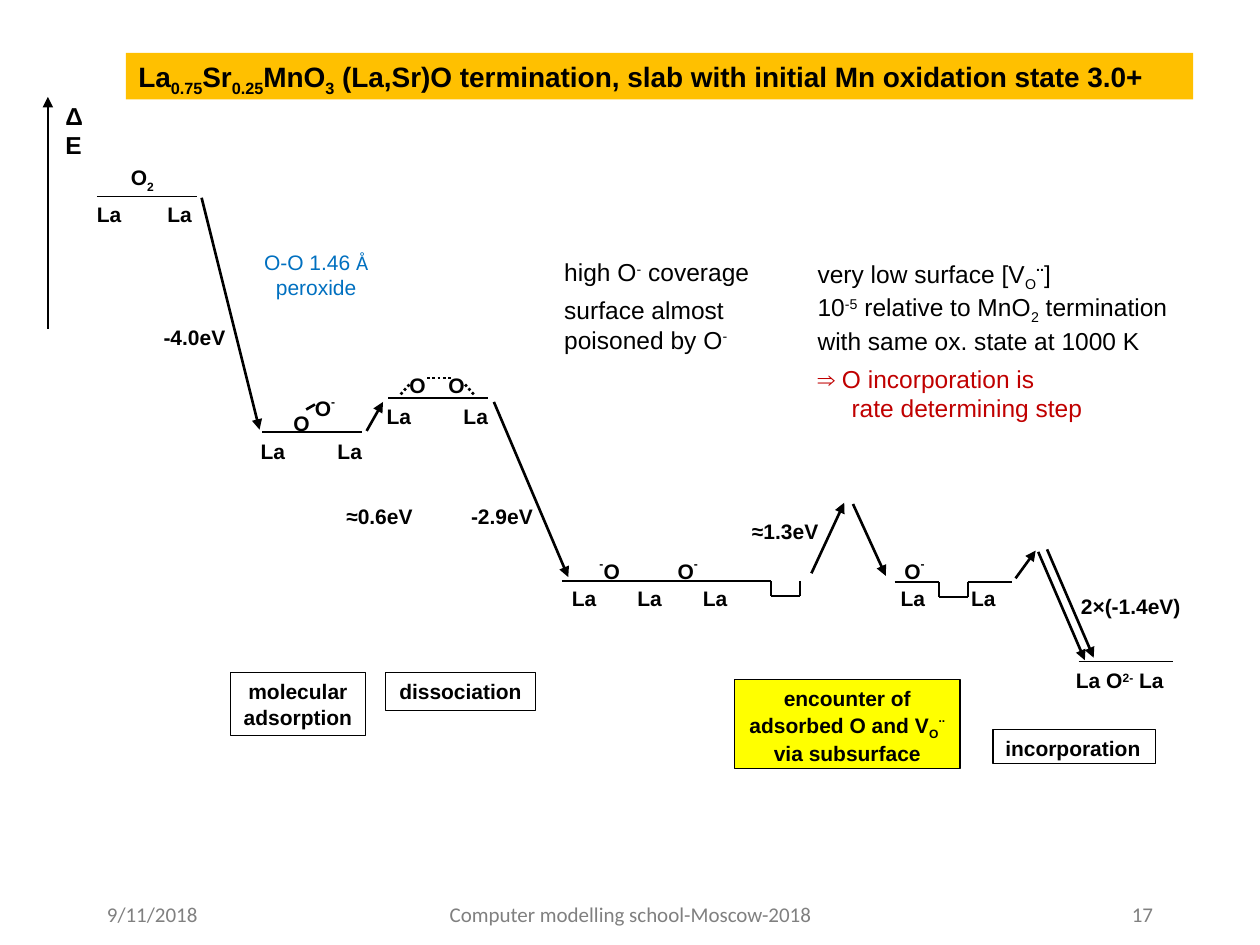
"""Build the energy diagram of oxygen incorporation on a (La,Sr)O-terminated slab."""
from dataclasses import dataclass
from typing import Optional

from lxml.etree import SubElement
from pptx import Presentation
from pptx.dml.color import RGBColor
from pptx.enum.dml import MSO_LINE
from pptx.enum.shapes import MSO_CONNECTOR, MSO_SHAPE
from pptx.enum.text import MSO_ANCHOR, PP_ALIGN
from pptx.oxml.ns import qn
from pptx.util import Inches, Pt

BLACK = RGBColor(0x00, 0x00, 0x00)
GRAY = RGBColor(0x80, 0x80, 0x80)
BLUE = RGBColor(0x00, 0x70, 0xC0)
RED = RGBColor(0xC0, 0x00, 0x00)
YELLOW = RGBColor(0xFF, 0xFF, 0x00)
AMBER = RGBColor(0xFF, 0xC0, 0x00)
LEFT, CENTER, RIGHT = PP_ALIGN.LEFT, PP_ALIGN.CENTER, PP_ALIGN.RIGHT

BASELINES = {"_": -25000, "^": 30000, "~": 50000}
MARK_FORMATS = {"~": {"bold": True}, "@": {"name": "Calibri"}}


@dataclass(frozen=True)
class Label:
    """Text in a box; "|" starts a span, and its first sign may mark a format."""
    left: float
    top: float
    width: float
    height: float
    lines: tuple[str, ...]
    size: int = 12
    bold: bool = True
    color: RGBColor = BLACK
    font: str = "Arial"
    align: PP_ALIGN = LEFT
    wrap: bool = False
    tab: float = 0
    gap_before: Optional[int] = None
    red_from: int = 99
    framed: bool = False
    fill: Optional[RGBColor] = None


@dataclass(frozen=True)
class Line:
    """A straight stroke between two points."""
    x1: float
    y1: float
    x2: float
    y2: float
    weight: float = 1
    arrow: bool = False
    dotted: bool = False


def atoms(left: float, top: float, width: float, text: str, tab: float = 0) -> Label:
    """Describe a row of atoms set at equal tab stops."""
    return Label(left, top, width, 0.2, (text,), tab=tab)


def energy(left: float, top: float, width: float, text: str) -> Label:
    """Describe an energy value."""
    return Label(left, top, width, 0.3, (text,))


def footer(left: float, width: float, text: str, align: PP_ALIGN) -> Label:
    """Describe one part of the footer."""
    return Label(left, 7.11, width, 0.5, (text,), bold=False, color=GRAY,
                 font="Calibri", align=align, wrap=True)


def arrow(x1: float, y1: float, x2: float, y2: float) -> Line:
    """Describe a reaction arrow."""
    return Line(x1, y1, x2, y2, 1.5, arrow=True)


def bond(x1: float, y1: float, x2: float, y2: float, dotted: bool = True) -> Line:
    """Describe a bond between atoms."""
    return Line(x1, y1, x2, y2, 1.5, dotted=dotted)


def level(left: float, right: float, top: float) -> Line:
    """Describe a flat energy level."""
    return Line(left, top, right, top)


def vacancy(left: float, top: float) -> list[Line]:
    """Describe the notch of an oxygen vacancy in a level."""
    right, bottom = left + 0.23, top + 0.12
    return [Line(left, top, left, bottom), Line(right, top, right, bottom),
            level(left, right, bottom)]


LABELS = [
    Label(1, 0.42, 8.47, 0.37,
          ("La|_0.75|Sr|_0.25|MnO|_3| (La,Sr)O termination, slab with initial Mn oxidation state 3.0+",),
          size=16, wrap=True, fill=AMBER),
    Label(0.42, 0.75, 0.45, 0.33, ("ΔE",), size=14, wrap=True),
    atoms(0.94, 1.26, 0.39, "O|_2"),
    atoms(0.67, 1.55, 0.97, "La\tLa", 0.56),
    atoms(1.97, 3.43, 1.02, "La\tLa", 0.61),
    atoms(2.4, 3.08, 0.37, "O|~-"),
    atoms(2.23, 3.21, 0.33, "O"),
    atoms(2.97, 3.15, 1.02, "La\tLa", 0.61),
    atoms(3.15, 2.91, 0.65, "O\tO", 0.31),
    atoms(4.44, 4.6, 1.5, "La\tLa\tLa", 0.52),
    atoms(4.66, 4.37, 1, "~-|O\tO|~-", 0.62),
    atoms(7.08, 4.37, 0.37, "O|~-"),
    atoms(7.05, 4.6, 0.97, "La\tLa", 0.56),
    atoms(8.44, 5.25, 0.92, "La O|^2-| La"),
    energy(1.2, 2.53, 0.7, "-4.0eV"),
    energy(2.65, 3.95, 0.73, "≈0.6eV"),
    energy(3.64, 3.95, 0.7, "-2.9eV"),
    energy(5.87, 4.07, 0.73, "≈1.3eV"),
    energy(8.48, 4.66, 0.99, "2×(-1.4eV)"),
    Label(1.83, 5.34, 1.07, 0.5, ("molecular", "adsorption"), align=CENTER, framed=True),
    Label(3.06, 5.34, 1.19, 0.3, ("dissociation",), align=CENTER, framed=True),
    Label(5.83, 5.39, 1.79, 0.71,
          ("encounter of", "adsorbed O and V|_O|~..", "via subsurface"),
          align=CENTER, wrap=True, framed=True, fill=YELLOW),
    Label(7.88, 5.79, 1.29, 0.27, ("incorporation",), framed=True),
    Label(1.88, 1.93, 1.26, 0.5, ("O-O 1.46 |@Å", "peroxide"), bold=False,
          color=BLUE, align=CENTER, wrap=True),
    Label(4.38, 1.99, 1.74, 0.88,
          ("high O|^-| coverage", "surface almost", "poisoned by O|^-"),
          size=14, bold=False, gap_before=1),
    Label(6.39, 1.99, 3.01, 1.35,
          ("very low surface [V|_O|~..|]", "10|^-5| relative to MnO|_2| termination",
           "with same ox. state at 1000 K", "⇒ O incorporation is",
           "\trate determining step"),
          size=14, bold=False, tab=0.27, gap_before=3, red_from=3),
    footer(0.75, 2.08, "9/11/2018", LEFT),
    footer(3.42, 3.17, "Computer modelling school-Moscow-2018", CENTER),
    footer(7.17, 2.08, "17", RIGHT),
]

LINES = [
    level(0.77, 1.56, 1.56), level(2.08, 2.87, 3.43), level(3.08, 3.87, 3.16),
    level(4.46, 5.96, 4.61), level(5.53, 6.12, 4.61), *vacancy(6.12, 4.61),
    level(7.1, 7.45, 4.62), *vacancy(7.45, 4.62), level(7.68, 8.03, 4.62),
    level(8.56, 9.31, 5.25),
    bond(2.5, 3.21, 2.43, 3.25, dotted=False), bond(3.39, 3, 3.59, 3),
    bond(3.18, 3.13, 3.25, 3.05), bond(3.76, 3.13, 3.69, 3.05),
    arrow(0.38, 2.61, 0.38, 0.77), arrow(1.6, 1.57, 2.06, 3.41),
    arrow(2.91, 3.42, 3.04, 3.19), arrow(3.92, 3.19, 4.51, 4.58),
    arrow(6.44, 4.55, 6.7, 3.99), arrow(6.77, 4, 7.03, 4.57),
    arrow(8.06, 4.59, 8.22, 4.37), arrow(8.24, 4.38, 8.61, 5.24),
    arrow(8.31, 4.36, 8.68, 5.22),
]


def write_line(para, text: str, label: Label, color: RGBColor) -> None:
    """Write one paragraph span by span."""
    for part in text.split("|"):
        mark = part[0] if part[0] in "_^~@" else ""
        span = para.add_run()
        span.text = part[len(mark):]
        values = {"name": label.font, "size": Pt(label.size), "bold": label.bold}
        for key, value in (values | MARK_FORMATS.get(mark, {})).items():
            setattr(span.font, key, value)
        span.font.color.rgb = color
        if mark in BASELINES:
            span._r.get_or_add_rPr().set("baseline", str(BASELINES[mark]))


def draw_label(page, label: Label) -> None:
    """Draw a label as a text box, or as a rectangle if framed or filled."""
    place = [Inches(v) for v in (label.left, label.top, label.width, label.height)]
    if label.framed or label.fill:
        box = page.shapes.add_shape(MSO_SHAPE.RECTANGLE, *place)
        box.shadow.inherit = False
        for part, color in ((box.fill, label.fill), (box.line.fill, BLACK if label.framed else None)):
            if color is None:
                part.background()
            else:
                part.solid()
                part.fore_color.rgb = color
        if label.framed:
            box.line.width = Pt(0.75)
    else:
        box = page.shapes.add_textbox(*place)
    frame = box.text_frame
    frame.word_wrap, frame.vertical_anchor = label.wrap, MSO_ANCHOR.TOP
    for index, text in enumerate(label.lines):
        para = frame.add_paragraph() if index else frame.paragraphs[0]
        para.alignment = label.align
        if index == label.gap_before:
            para.space_before = Pt(5)
        if "\t" in text:
            stops = SubElement(para._p.get_or_add_pPr(), qn("a:tabLst"))
            for count in range(1, text.count("\t") + 1):
                SubElement(stops, qn("a:tab"), pos=str(Inches(label.tab * count)), algn="l")
        write_line(para, text, label, RED if index >= label.red_from else label.color)


def draw_line(page, line: Line) -> None:
    """Draw a stroke, with an arrowhead or dots when asked."""
    ends = [Inches(v) for v in (line.x1, line.y1, line.x2, line.y2)]
    stroke = page.shapes.add_connector(MSO_CONNECTOR.STRAIGHT, *ends)
    stroke.line.color.rgb = BLACK
    stroke.line.width = Pt(line.weight)
    if line.dotted:
        stroke.line.dash_style = MSO_LINE.ROUND_DOT
    if line.arrow:
        SubElement(stroke.line._get_or_add_ln(), qn("a:tailEnd"), type="triangle")
    SubElement(stroke._element.spPr, qn("a:effectLst"))


def main() -> None:
    """Build and save the deck."""
    deck = Presentation()
    deck.slide_width, deck.slide_height = Inches(10), Inches(7.5)
    page = deck.slides.add_slide(deck.slide_layouts[6])
    for label in LABELS:
        draw_label(page, label)
    for line in LINES:
        draw_line(page, line)
    deck.save("out.pptx")


if __name__ == "__main__":
    main()
